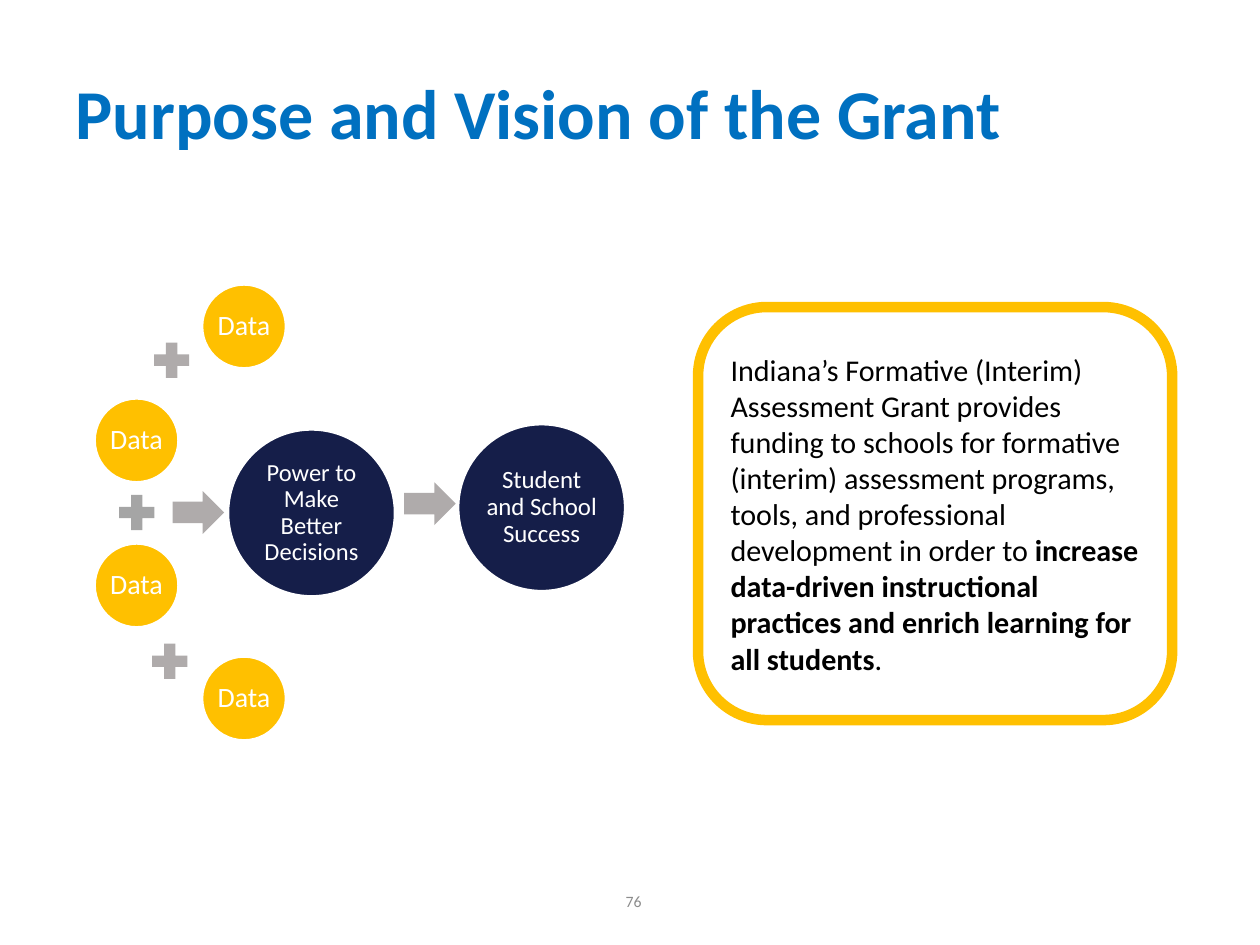
from pptx import Presentation
from pptx import util as u
from pptx.dml.color import RGBColor
from pptx.enum import shapes, text

COLORS = {"title": "0070C0", "gold": "FFC000", "navy": "151E49", "white": "FFFFFF",
          "black": "000000", "arrow": "AFABAB", "plus": "A5A5A5", "number": "8C8C8C"}
SHAPE = shapes.MSO_SHAPE
ALIGN = text.PP_ALIGN


class Deck:
    """Style and drawing methods for the current slide; lengths are in points."""

    def __init__(self, width, height, font="Calibri"):
        self.prs = Presentation()
        self.prs.slide_width, self.prs.slide_height = u.Pt(width), u.Pt(height)
        self.font = font
        self.s = self.prs.slides.add_slide(self.prs.slide_layouts[5])

    def color(self, name):
        return RGBColor.from_string(COLORS[name])

    def add_text(self, sp, runs, size, color, align=ALIGN.LEFT, spacing=None, inset=None):
        tf = sp.text_frame
        tf.word_wrap = True
        tf.auto_size = text.MSO_AUTO_SIZE.NONE
        tf.vertical_anchor = text.MSO_ANCHOR.MIDDLE
        if inset is not None:
            tf.margin_left = tf.margin_right = u.Pt(inset)
            tf.margin_top = tf.margin_bottom = u.Pt(inset)
        p = tf.paragraphs[0]
        p.alignment = align
        if spacing:
            p.line_spacing = spacing
        for words, bold in runs:
            r = p.add_run()
            r.text = words
            r.font.name, r.font.size, r.font.bold = self.font, u.Pt(size), bold
            r.font.color.rgb = self.color(color)

    def title(self, words, x, y, w, h):
        sp = self.s.shapes.title
        sp.left, sp.top, sp.width, sp.height = map(u.Pt, (x, y, w, h))
        self.add_text(sp, [(words, True)], 40, "title", spacing=0.9)

    def label(self, words, x, y, w, h, size, color, align):
        sp = self.s.shapes.add_textbox(*map(u.Pt, (x, y, w, h)))
        self.add_text(sp, [(words, False)], size, color, align)

    def shape(self, kind, x, y, w, h, fill, line=None, weight=1):
        sp = self.s.shapes.add_shape(kind, *map(u.Pt, (x, y, w, h)))
        sp.shadow.inherit = False
        sp.fill.solid()
        sp.fill.fore_color.rgb = self.color(fill)
        if line:
            sp.line.color.rgb = self.color(line)
            sp.line.width = u.Pt(weight)
        else:
            sp.line.fill.background()
        return sp

    def circle(self, words, x, y, d, fill, size):
        sp = self.shape(SHAPE.OVAL, x, y, d, d, fill, "white")
        self.add_text(sp, [(words, False)], size, "white", ALIGN.CENTER, 0.9, 1.2)

    def panel(self, runs, x, y, w, h, size):
        sp = self.shape(SHAPE.ROUNDED_RECTANGLE, x, y, w, h, "white", "gold", 6)
        self.add_text(sp, runs, size, "black")


def main():
    d = Deck(720, 540)
    d.title("Purpose and Vision of the Grant", 36, 21.6, 648, 90)
    d.label("76", 211.7, 500.4, 162, 28.8, 9, "number", ALIGN.RIGHT)

    for x, y in ((115.7, 162.8), (54.3, 227.9), (54.3, 310.8), (115.7, 375.4)):
        d.circle("Data", x, y, 47.5, "gold", 16)
    for x, y, fill in ((84.4, 192.1, "arrow"), (64.4, 279.2, "plus"), (83.3, 364.2, "arrow")):
        d.shape(SHAPE.MATH_PLUS, x, y, 27.4, 27.4, fill)

    d.circle("Power to Make Better Decisions", 130.5, 245.6, 95, "navy", 14)
    d.circle("Student and School Success", 262, 242.6, 95, "navy", 14.2)
    for x, y in ((98.6, 280.6), (230.9, 275.6)):
        d.shape(SHAPE.RIGHT_ARROW, x, y, 29.5, 24.5, "arrow")

    d.panel([("Indiana’s Formative (Interim) Assessment Grant provides funding to schools for "
              "formative (interim) assessment programs, tools, and professional development "
              "in order to ", False),
             ("increase data-driven instructional practices and enrich learning for all "
              "students", True),
             (".", False)], 398.9, 175.5, 270.9, 236, 17.2)
    d.prs.save("out.pptx")


if __name__ == "__main__":
    main()
